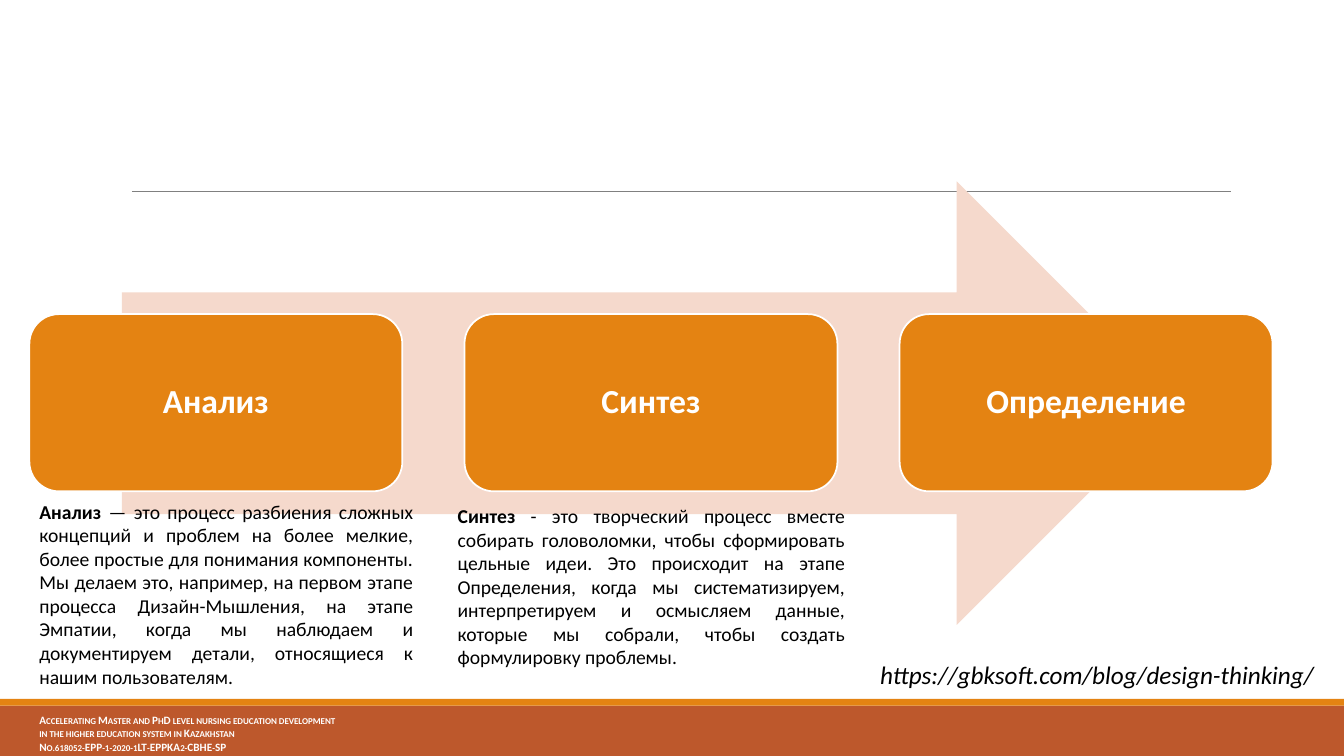
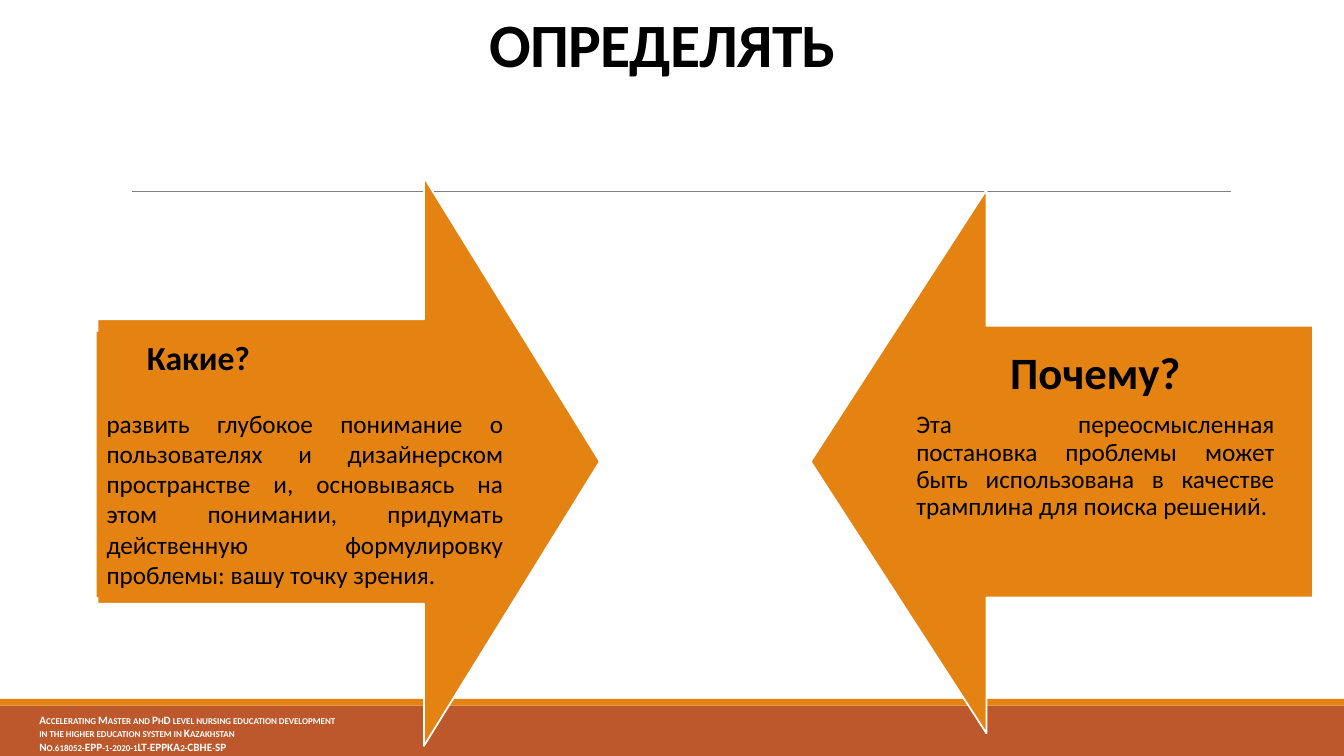
from pptx import Presentation
from pptx import util as u
from pptx.dml.color import RGBColor
from pptx.enum import shapes, text
from pptx.oxml.ns import qn

ORANGE = RGBColor(0xE4, 0x83, 0x12)
RUST = RGBColor(0xBD, 0x58, 0x2C)
PEACH = RGBColor(0xF5, 0xD9, 0xCC)
GRAY = RGBColor(0x80, 0x80, 0x80)
WHITE = RGBColor(0xFF, 0xFF, 0xFF)
BLACK = RGBColor(0, 0, 0)

FORM = shapes.MSO_SHAPE
SIDE = text.PP_ALIGN
EDGE = text.MSO_ANCHOR
COLS, ROWS = 160, 90
FOOT = (
    "Accelerating Master and PhD level nursing education development",
    "in the higher education system in Kazakhstan",
    "No.618052-EPP-1-2020-1LT-EPPKA2-CBHE-SP",
)


class Deck:
    face = "Calibri"

    def __init__(self):
        self.show = Presentation()
        self.show.slide_width = u.Inches(13.33)
        self.show.slide_height = u.Inches(7.5)
        self.slide = None

    def grid(self, col, row):
        return (round(self.show.slide_width * col / COLS),
                round(self.show.slide_height * row / ROWS))

    def page(self):
        self.slide = self.show.slides.add_slide(self.show.slide_layouts[6])
        self.shape(FORM.RECTANGLE, (0, 84, COLS, 6), RUST)
        self.shape(FORM.RECTANGLE, (0, 83.2, COLS, 0.8), ORANGE)
        self.rule((15.7, 22.8), (146.5, 22.8))
        foot = self.box((3.5, 84.3, 55, 5.7))
        for line in FOOT:
            self.para(foot, line, 8, WHITE, bold=True, extra={"cap": "small"})

    def shape(self, form, area, fill, edge=None, adjust=()):
        shape = self.slide.shapes.add_shape(
            form, *self.grid(*area[:2]), *self.grid(*area[2:]))
        shape.shadow.inherit = False
        shape.fill.solid()
        shape.fill.fore_color.rgb = fill
        if edge is None:
            shape.line.fill.background()
        else:
            shape.line.color.rgb = edge
            shape.line.width = u.Pt(1.25)
        for place, value in enumerate(adjust):
            shape.adjustments[place] = value
        return shape

    def rule(self, start, end):
        line = self.slide.shapes.add_connector(
            shapes.MSO_CONNECTOR.STRAIGHT, *self.grid(*start), *self.grid(*end))
        line.line.color.rgb = GRAY
        line.line.width = u.Pt(0.5)
        props = line._element.spPr
        props.append(props.makeelement(qn("a:effectLst"), {}))

    def box(self, area, anchor=EDGE.TOP):
        box = self.slide.shapes.add_textbox(
            *self.grid(*area[:2]), *self.grid(*area[2:]))
        box.text_frame.word_wrap = True
        box.text_frame.vertical_anchor = anchor
        return box

    def para(self, box, words, size, color=BLACK, side=SIDE.LEFT, bold=False,
             slant=False, lead="", space=1.0, before=0, indent=0, extra=None):
        frame = box.text_frame
        para = frame.paragraphs[0]
        if para.runs:
            para = frame.add_paragraph()
        para.alignment = side
        para.line_spacing = space
        para.space_before = u.Pt(before)
        props = para._p.get_or_add_pPr()
        if indent:
            props.set("marL", str(u.Inches(indent)))
        font = para.font
        font.name, font.size = self.face, u.Pt(size)
        font.bold, font.italic = bold, slant
        font.color.rgb = color
        for key, value in (extra or {}).items():
            props.get_or_add_defRPr().set(key, value)
        if lead:
            head = para.add_run()
            head.text = lead
            head.font.bold = True
        para.add_run().text = words

    def card(self, area, label):
        card = self.shape(FORM.ROUNDED_RECTANGLE, area, ORANGE, WHITE)
        card.text_frame.vertical_anchor = EDGE.MIDDLE
        self.para(card, label, 24, WHITE, SIDE.CENTER, bold=True, space=0.9)

    def title(self, words):
        box = self.box((4.9, 0, 148, 10.1), EDGE.BOTTOM)
        self.para(box, words, 44, side=SIDE.CENTER, bold=True, space=0.85,
                  extra={"spc": "-50"})

    def save(self):
        self.show.save("out.pptx")


def steps(deck):
    deck.page()
    deck.shape(FORM.RIGHT_ARROW, (14.5, 21.6, 125.8, 52.8), PEACH)
    for place, label in enumerate(("Анализ", "Синтез", "Определение")):
        deck.card((3.5 + 51.8 * place, 37.4, 44.4, 21.1), label)
    link = deck.box((103.6, 77.9, 56.4, 4.8))
    deck.para(link, "https://gbksoft.com/blog/design-thinking/", 18, slant=True)
    notes = (
        ((3.5, 58.9, 46.9, 23.9), "Анализ",
         " — это процесс разбиения сложных концепций и проблем на более мелкие, "
         "более простые для понимания компоненты. Мы делаем это, например, на "
         "первом этапе процесса Дизайн-Мышления, на этапе Эмпатии, когда мы "
         "наблюдаем и документируем детали, относящиеся к нашим пользователям."),
        ((53.3, 59.4, 48.5, 21), "Синтез",
         " - это творческий процесс вместе собирать головоломки, чтобы "
         "сформировать цельные идеи. Это происходит на этапе Определения, когда "
         "мы систематизируем, интерпретируем и осмысляем данные, которые мы "
         "собрали, чтобы создать формулировку проблемы."),
    )
    for area, lead, words in notes:
        deck.para(deck.box(area), words, 14, side=SIDE.JUSTIFY, lead=lead)


def define(deck):
    deck.page()
    arrows = (
        (FORM.RIGHT_ARROW, (11.6, 21.1, 59.8, 67.7)),
        (FORM.LEFT_ARROW, (96.5, 22.6, 59.8, 64.7)),
    )
    for form, area in arrows:
        deck.shape(form, area, ORANGE, WHITE, (0.5, 0.35))
    deck.title("ОПРЕДЕЛЯТЬ")
    what = deck.shape(FORM.RECTANGLE, (11.5, 39.5, 49.6, 31.6), ORANGE)
    what.text_frame.vertical_anchor = EDGE.TOP
    deck.para(what, "Какие?", 24, bold=True, indent=0.4)
    deck.para(what, "развить глубокое понимание о пользователях и дизайнерском "
              "пространстве и, основываясь на этом понимании, придумать "
              "действенную формулировку проблемы: вашу точку зрения.",
              18, side=SIDE.JUSTIFY, before=22)
    why = deck.box((107.9, 41.2, 45, 22.3))
    deck.para(why, "Почему?", 32, side=SIDE.CENTER, bold=True, space=0.9)
    deck.para(why, "Эта переосмысленная постановка проблемы может быть "
              "использована в качестве трамплина для поиска решений.",
              18, side=SIDE.JUSTIFY, space=0.9, before=9)


def main():
    deck = Deck()
    steps(deck)
    define(deck)
    deck.save()


if __name__ == "__main__":
    main()
